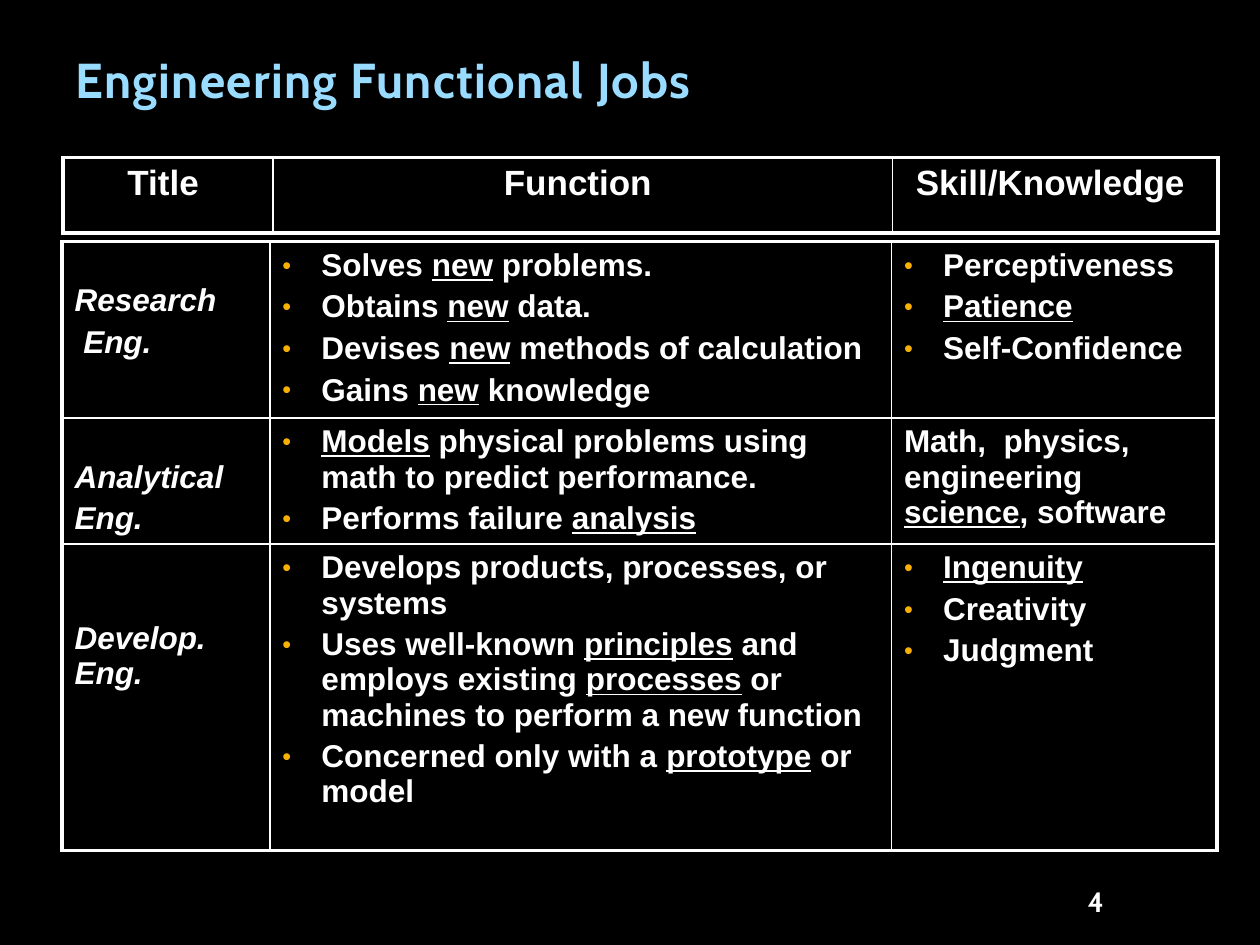
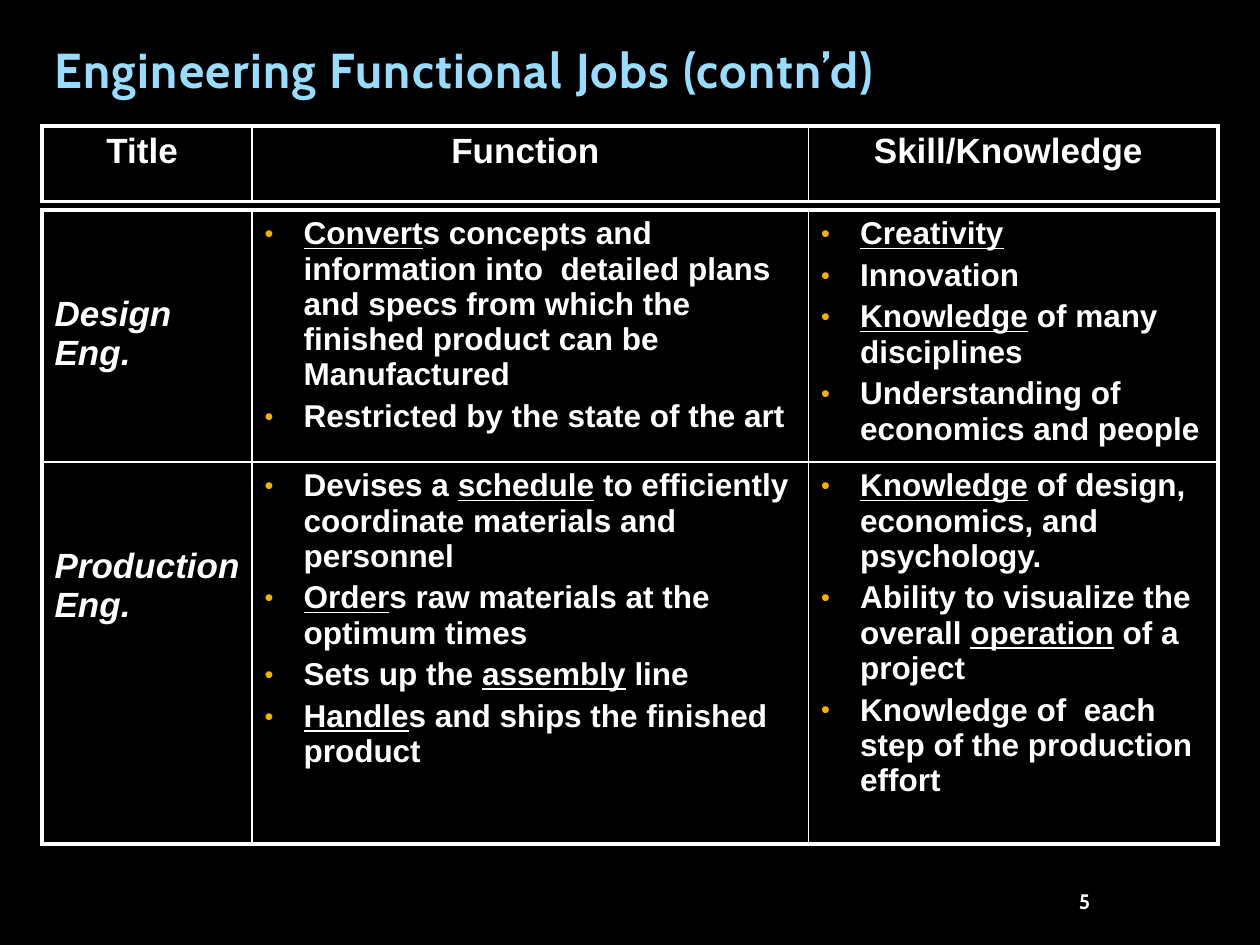
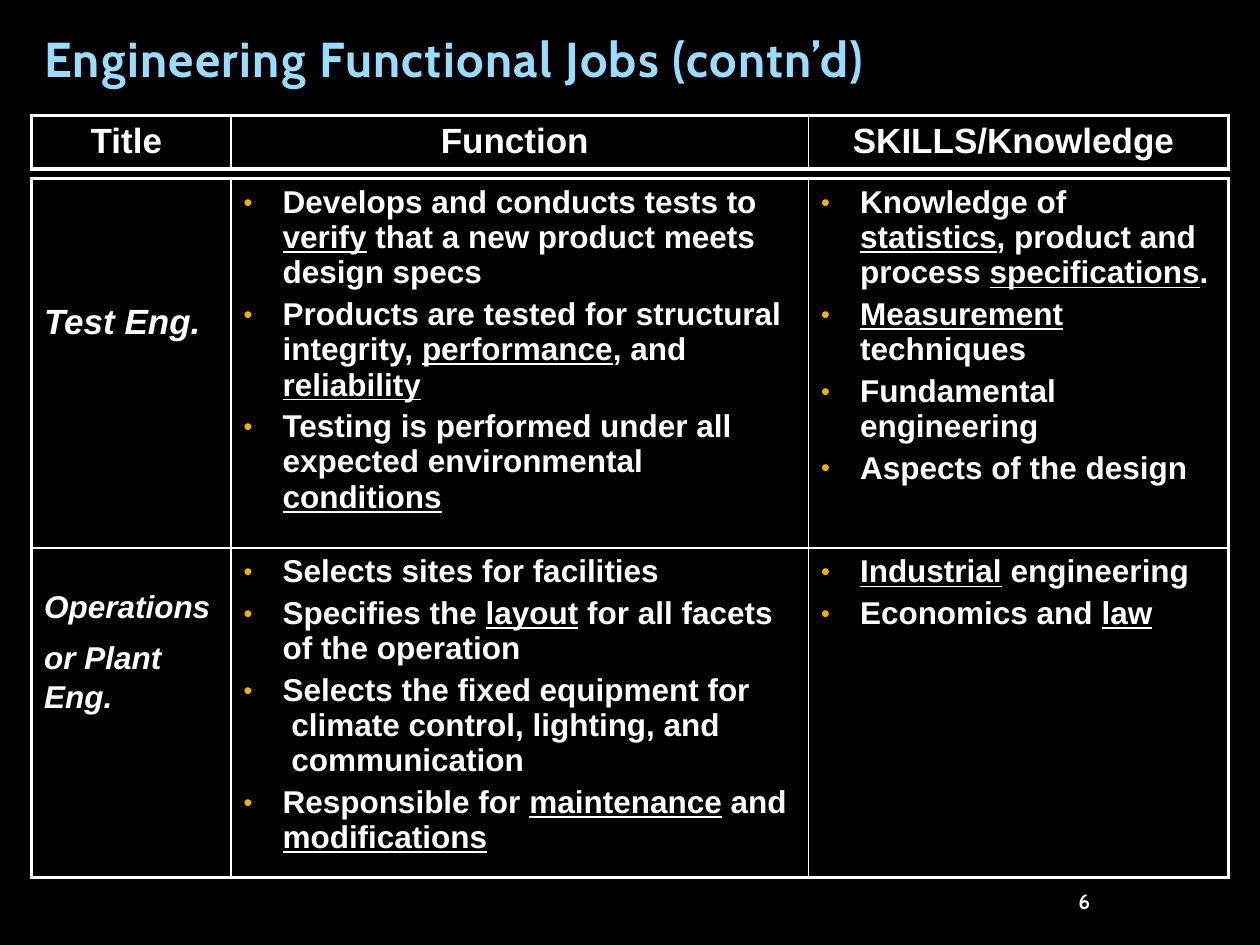
import pptx
import pptx.dml.color
import pptx.enum.text
import pptx.oxml
import pptx.oxml.ns
import pptx.util

RGBColor = pptx.dml.color.RGBColor
Pt = pptx.util.Pt
Inches = pptx.util.Inches
PP_ALIGN = pptx.enum.text.PP_ALIGN
MSO_ANCHOR = pptx.enum.text.MSO_ANCHOR

BLACK = RGBColor(0x00, 0x00, 0x00)
WHITE = RGBColor(0xFF, 0xFF, 0xFF)
SKY = RGBColor(0x9A, 0xDC, 0xFF)
AMBER = RGBColor(0xF8, 0xB0, 0x04)

SLIDE_WIDTH, SLIDE_HEIGHT = Inches(10), Inches(7.5)
GRID_COLUMNS = 120
UNIT = SLIDE_WIDTH / GRID_COLUMNS

OUTER_LINE, INNER_LINE = 2.25, 1
BULLET_INDENT = Inches(0.31)
CELL_TOP = 0.05
LINE_PITCH = 1.12
WIDE_GAP_SIZE = 28

TITLE_FONT = {"name": "Cabin", "size": Pt(28), "bold": True}
NUMBER_FONT = {"name": "Cabin", "bold": True}
CELL_FONT = {"name": "Arial", "bold": True}

SLIDES = [
    {
        "title": "Engineering Functional Jobs",
        "title_box": (6, 3, 90, 8),
        "header_box": (6, 15, 110, 7.2),
        "header_columns": (20, 59, 31),
        "headings": ("Title ", "Function ", "Skill/Knowledge "),
        "jobs_box": (5.9, 23, 110, 58),
        "jobs_columns": (19.8, 59.2, 31),
        "jobs_rows": (16.8, 12, 29.2),
        "jobs": [
            {"label": ["Research", " Eng."], "size": 18, "lines_above": 1,
             "functions": ["Solves _new_ problems.", "Obtains _new_ data.",
                           "Devises _new_ methods of calculation", "Gains _new_ knowledge"],
             "skills": ["Perceptiveness", "_Patience_", "Self-Confidence"]},
            {"label": ["Analytical", "Eng."], "size": 18, "lines_above": 1,
             "functions": ["_Models_ physical problems using math to predict performance.",
                           "Performs failure _analysis_"],
             "skills": "Math,  physics,\nengineering\n_science_, software"},
            {"label": ["Develop. Eng."], "size": 18, "lines_above": 2,
             "functions": ["Develops products, processes, or systems",
                           "Uses well-known _principles_ and employs existing _processes_ "
                           "or machines to perform a new function",
                           "Concerned only with a _prototype_ or model"],
             "skills": ["_Ingenuity_", "Creativity", "Judgment"]},
        ],
        "number": "4", "number_size": 16, "number_box": (98, 84, 8.3, 3.6),
    },
    {
        "title": "Engineering Functional Jobs (contn’d)",
        "title_box": (4, 4, 90, 6),
        "header_box": (4, 12, 112, 7.2),
        "header_columns": (20, 53, 39),
        "headings": ("Title ", "Function ", "Skill/Knowledge "),
        "jobs_box": (4, 20, 112, 60.4),
        "jobs_columns": (20, 53, 39),
        "jobs_rows": (24, 36.4),
        "jobs": [
            {"label": ["Design Eng."], "size": 20, "lines_above": 2,
             "functions": ["_Convert_s concepts and information into  detailed plans and specs "
                           "from which the finished product can be Manufactured",
                           "Restricted by the state of the art"],
             "skills": ["_Creativity_", "Innovation", "_Knowledge_ of many disciplines",
                        "Understanding of economics and people"]},
            {"label": ["Production Eng."], "size": 20, "lines_above": 2,
             "functions": ["Devises a _schedule_ to efficiently coordinate materials and personnel",
                           "_Order_s raw materials at the optimum times",
                           "Sets up the _assembly_ line",
                           "_Handle_s and ships the finished product"],
             "skills": ["_Knowledge_ of design, economics, and psychology.",
                        "Ability to visualize the overall _operation_ of a project",
                        "Knowledge of  each step of the production effort"]},
        ],
        "number": "5", "number_size": 12, "number_box": (96.7, 84, 8.3, 3.6),
    },
    {
        "title": "Engineering Functional Jobs (contn’d)",
        "title_box": (3, 3, 90, 6),
        "header_box": (3, 11, 114, 5.1),
        "header_columns": (19, 55, 40),
        "headings": ("Title ", "Function ", "SKILLS/Knowledge "),
        "jobs_box": (3, 17, 114, 66.6),
        "jobs_columns": (19, 55, 40),
        "jobs_rows": (35.2, 31.4),
        "jobs": [
            {"label": ["Test Eng."], "size": 20, "lines_above": 3,
             "functions": ["Develops and conducts tests to _verify_ that a new product meets design specs",
                           "Products are tested for structural integrity, _performance_, and _reliability_",
                           "Testing is performed under all expected environmental _conditions_"],
             "skills": ["Knowledge of _statistics_, product and process _specifications_.",
                        "_Measurement_ techniques", "Fundamental engineering",
                        "Aspects of the design"]},
            {"label": ["Operations or Plant^ ^Eng."], "size": 18, "lines_above": 1,
             "functions": ["Selects sites for facilities",
                           "Specifies the _layout_ for all facets of the operation",
                           "Selects the fixed equipment for\n climate control, lighting, and\n communication",
                           "Responsible for _maintenance_ and _modifications_"],
             "skills": ["_Industrial_ engineering", "Economics and _law_"]},
        ],
        "number": "6", "number_size": 12, "number_box": (96.7, 84, 8.3, 3.6),
    },
]


def grid(*counts):
    return [round(count * UNIT) for count in counts]


def apply(target, values):
    for key, value in values.items():
        setattr(target, key, value)


def style_font(font, values, color):
    apply(font, values)
    font.color.rgb = color


def add_xml(parent, tag, **attributes):
    child = pptx.oxml.parse_xml(f"<a:{tag} {pptx.oxml.ns.nsdecls('a')}/>")
    for key, value in attributes.items():
        child.set(key, str(value))
    parent.append(child)
    return child


def add_bullet(paragraph):
    properties = paragraph._p.get_or_add_pPr()
    properties.set("marL", str(BULLET_INDENT))
    properties.set("indent", str(-BULLET_INDENT))
    add_xml(add_xml(properties, "buClr"), "srgbClr", val=AMBER)
    add_xml(properties, "buSzPct", val=80000)
    add_xml(properties, "buFont", typeface="Arial")
    add_xml(properties, "buChar", char="•")


def add_marked_text(paragraph, marked, size, italic):
    for u, stretch in enumerate(marked.split("_")):
        for w, part in enumerate(stretch.split("^")):
            for n, line in enumerate(part.split("\n")):
                if n:
                    paragraph.add_line_break()
                if line:
                    run = paragraph.add_run()
                    run.text = line
                    run_size = WIDE_GAP_SIZE if w % 2 else size
                    extra = {"size": Pt(run_size), "italic": italic, "underline": u % 2 == 1}
                    style_font(run.font, CELL_FONT | extra, WHITE)


def fill_cell(cell, paragraphs, size=18, italic=False, bulleted=False, align=None):
    for n, marked in enumerate(paragraphs):
        paragraph = cell.text_frame.paragraphs[0] if n == 0 else cell.text_frame.add_paragraph()
        if bulleted:
            add_bullet(paragraph)
        if n:
            paragraph.space_before = Pt(size * 0.2)
        paragraph.alignment = align
        add_marked_text(paragraph, marked, size, italic)


def draw_borders(cell, outer_sides):
    properties = cell._tc.get_or_add_tcPr()
    for side, is_outer in outer_sides.items():
        width = Pt(OUTER_LINE if is_outer else INNER_LINE)
        border = add_xml(properties, side, w=int(width))
        add_xml(add_xml(border, "solidFill"), "srgbClr", val=WHITE)
    cell.fill.background()


def add_ruled_table(slide, box, columns, rows):
    table = slide.shapes.add_table(len(rows), len(columns), *grid(*box)).table
    apply(table, {"first_row": False, "horz_banding": False})
    for column, width in zip(table.columns, grid(*columns)):
        column.width = width
    for row, height in zip(table.rows, grid(*rows)):
        row.height = height
    for r in range(len(rows)):
        for c in range(len(columns)):
            draw_borders(table.cell(r, c), {
                "lnL": c == 0, "lnR": c == len(columns) - 1,
                "lnT": r == 0, "lnB": r == len(rows) - 1})
    return table


def add_jobs(slide, box, columns, rows, jobs):
    table = add_ruled_table(slide, box, columns, rows)
    for r, job in enumerate(jobs):
        label, functions, skills = (table.cell(r, c) for c in range(3))
        drop = job["lines_above"] * job["size"] * LINE_PITCH / 72
        apply(label, {"margin_top": Inches(CELL_TOP + drop),
                      "margin_right": Inches(0.05), "margin_bottom": 0})
        fill_cell(label, job["label"], job["size"], italic=True)
        fill_cell(functions, job["functions"], bulleted=True)
        listed = isinstance(job["skills"], list)
        fill_cell(skills, job["skills"] if listed else [job["skills"]], bulleted=listed)


def add_header(slide, box, columns, headings):
    table = add_ruled_table(slide, box, columns, box[3:])
    for c, heading in enumerate(headings):
        fill_cell(table.cell(0, c), [heading], 20, align=PP_ALIGN.CENTER)


def set_title(slide, box, wording):
    title = slide.shapes.title
    apply(title, dict(zip(("left", "top", "width", "height"), grid(*box))))
    apply(title.text_frame, {"text": wording, "word_wrap": True,
                             "vertical_anchor": MSO_ANCHOR.BOTTOM,
                             "auto_size": pptx.enum.text.MSO_AUTO_SIZE.NONE})
    paragraph = title.text_frame.paragraphs[0]
    apply(paragraph, {"alignment": PP_ALIGN.LEFT, "line_spacing": 0.9})
    run = paragraph.runs[0]
    style_font(run.font, TITLE_FONT, SKY)
    run._r.get_or_add_rPr().set("spc", "80")


def add_number(slide, box, number, size):
    frame = slide.shapes.add_textbox(*grid(*box)).text_frame
    apply(frame, {"text": number, "word_wrap": True, "vertical_anchor": MSO_ANCHOR.MIDDLE})
    paragraph = frame.paragraphs[0]
    paragraph.alignment = PP_ALIGN.RIGHT
    style_font(paragraph.runs[0].font, NUMBER_FONT | {"size": Pt(size)}, WHITE)


def add_jobs_slide(deck, content):
    slide = deck.slides.add_slide(deck.slide_layouts[5])
    set_title(slide, content["title_box"], content["title"])
    add_jobs(slide, content["jobs_box"], content["jobs_columns"],
             content["jobs_rows"], content["jobs"])
    add_header(slide, content["header_box"], content["header_columns"], content["headings"])
    add_number(slide, content["number_box"], content["number"], content["number_size"])


def main():
    deck = pptx.Presentation()
    apply(deck, {"slide_width": SLIDE_WIDTH, "slide_height": SLIDE_HEIGHT})
    backdrop = deck.slide_master.background.fill
    backdrop.solid()
    backdrop.fore_color.rgb = BLACK
    for content in SLIDES:
        add_jobs_slide(deck, content)
    deck.save("out.pptx")


if __name__ == "__main__":
    main()
